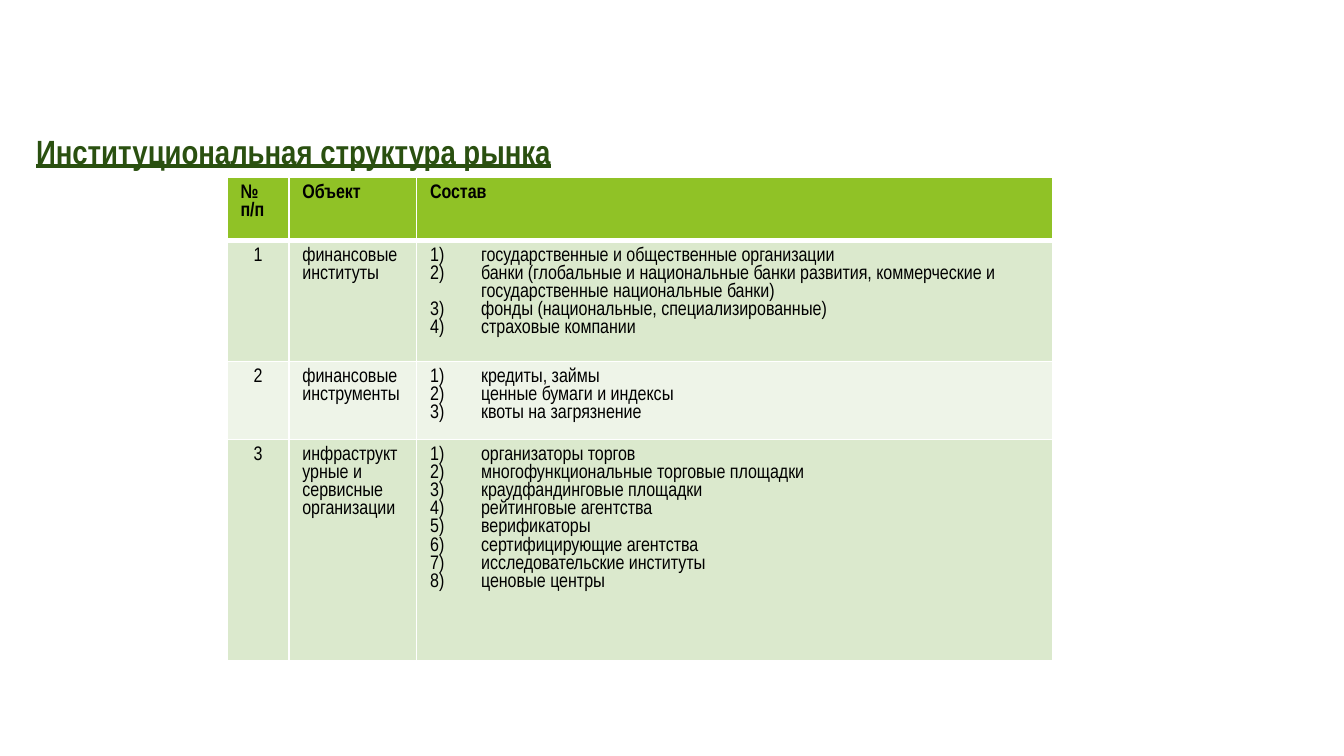
from lxml.etree import SubElement
from pptx import Presentation
from pptx.dml.color import RGBColor
from pptx.enum.text import MSO_ANCHOR, PP_ALIGN
from pptx.oxml.ns import qn
from pptx.util import Inches, Pt

FONT = "Arial Narrow"
BLACK = RGBColor(0x00, 0x00, 0x00)
WHITE = RGBColor(0xFF, 0xFF, 0xFF)
DARK_GREEN = RGBColor(0x2A, 0x50, 0x10)
HEADER_GREEN = RGBColor(0x90, 0xC2, 0x26)
BANDS = [RGBColor(0xDB, 0xE9, 0xCD), RGBColor(0xEE, 0xF4, 0xE8)]

SLIDE_WIDTH = Inches(10)
SLIDE_HEIGHT = SLIDE_WIDTH * 9 // 16
COLUMN_WIDTHS = [0.46, 0.95, 4.73]
ROW_HEIGHTS = [0.47, 0.9, 0.58, 1.65]
LIST_INDENT = Inches(0.38)

HEADERS = ["№ п/п", "Объект", "Состав"]
OBJECTS = [
    ("финансовые институты", [
        "государственные и общественные организации",
        "банки (глобальные и национальные банки развития, коммерческие и "
        "государственные национальные банки)",
        "фонды (национальные, специализированные)",
        "страховые компании",
    ]),
    ("финансовые инструменты", [
        "кредиты, займы",
        "ценные бумаги и индексы",
        "квоты на загрязнение",
    ]),
    ("инфраструктурные и сервисные организации", [
        "организаторы торгов",
        "многофункциональные торговые площадки",
        "краудфандинговые площадки",
        "рейтинговые агентства",
        "верификаторы",
        "сертифицирующие агентства",
        "исследовательские институты",
        "ценовые центры",
    ]),
]


def set_font(paragraph, size, color, bold=False):
    font = paragraph.font
    font.name = FONT
    font.size = Pt(size)
    font.bold = bold
    font.color.rgb = color


def number_paragraph(paragraph):
    properties = paragraph._p.get_or_add_pPr()
    properties.set("marL", str(LIST_INDENT))
    properties.set("indent", str(-LIST_INDENT))
    SubElement(properties, qn("a:buFont"), typeface="+mj-lt")
    SubElement(properties, qn("a:buAutoNum"), type="arabicParenR")


def set_borders(cell, top=1, bottom=1):
    properties = cell._tc.get_or_add_tcPr()
    for side, width in (("L", 1), ("R", 1), ("T", top), ("B", bottom)):
        line = SubElement(properties, qn(f"a:ln{side}"), w=str(Pt(width)))
        fill = SubElement(line, qn("a:solidFill"))
        SubElement(fill, qn("a:srgbClr"), val=str(WHITE))


def fill_cell(cell, lines, color, bold=False, numbered=False, centered=False):
    cell.fill.solid()
    cell.fill.fore_color.rgb = color
    cell.text = "\n".join(lines)
    for paragraph in cell.text_frame.paragraphs:
        if numbered:
            number_paragraph(paragraph)
        if centered:
            paragraph.alignment = PP_ALIGN.CENTER
        set_font(paragraph, 10.5, BLACK, bold)


def add_title(slide, left, top, width, height):
    box = slide.shapes.add_textbox(left, top, width, height)
    frame = box.text_frame
    frame.word_wrap = True
    frame.vertical_anchor = MSO_ANCHOR.BOTTOM
    paragraph = frame.paragraphs[0]
    paragraph.text = "Институциональная структура рынка"
    set_font(paragraph, 18, DARK_GREEN, bold=True)
    paragraph.font.underline = True


def add_structure_table(slide, left, top, width, height):
    table = slide.shapes.add_table(
        len(ROW_HEIGHTS), len(COLUMN_WIDTHS), left, top, width, height).table
    for column, share in zip(table.columns, COLUMN_WIDTHS):
        column.width = int(width * share / sum(COLUMN_WIDTHS))
    for row, share in zip(table.rows, ROW_HEIGHTS):
        row.height = int(height * share / sum(ROW_HEIGHTS))

    for index, row in enumerate(table.rows):
        for cell in row.cells:
            set_borders(cell, top=3 if index == 1 else 1,
                        bottom=3 if index == 0 else 1)

    for cell, header in zip(table.rows[0].cells, HEADERS):
        fill_cell(cell, [header], HEADER_GREEN, bold=True)
    for number, (name, members) in enumerate(OBJECTS, 1):
        color = BANDS[(number - 1) % 2]
        number_cell, name_cell, members_cell = table.rows[number].cells
        fill_cell(number_cell, [str(number)], color, centered=True)
        fill_cell(name_cell, [name], color)
        fill_cell(members_cell, members, color, numbered=True)


def main():
    presentation = Presentation()
    presentation.slide_width = SLIDE_WIDTH
    presentation.slide_height = SLIDE_HEIGHT
    slide = presentation.slides.add_slide(presentation.slide_layouts[6])
    add_structure_table(slide, Inches(1.69), Inches(1.32),
                        Inches(sum(COLUMN_WIDTHS)), Inches(sum(ROW_HEIGHTS)))
    add_title(slide, Inches(0.17), Inches(0.92), Inches(6.67), Inches(0.4))
    presentation.save("out.pptx")


if __name__ == "__main__":
    main()
